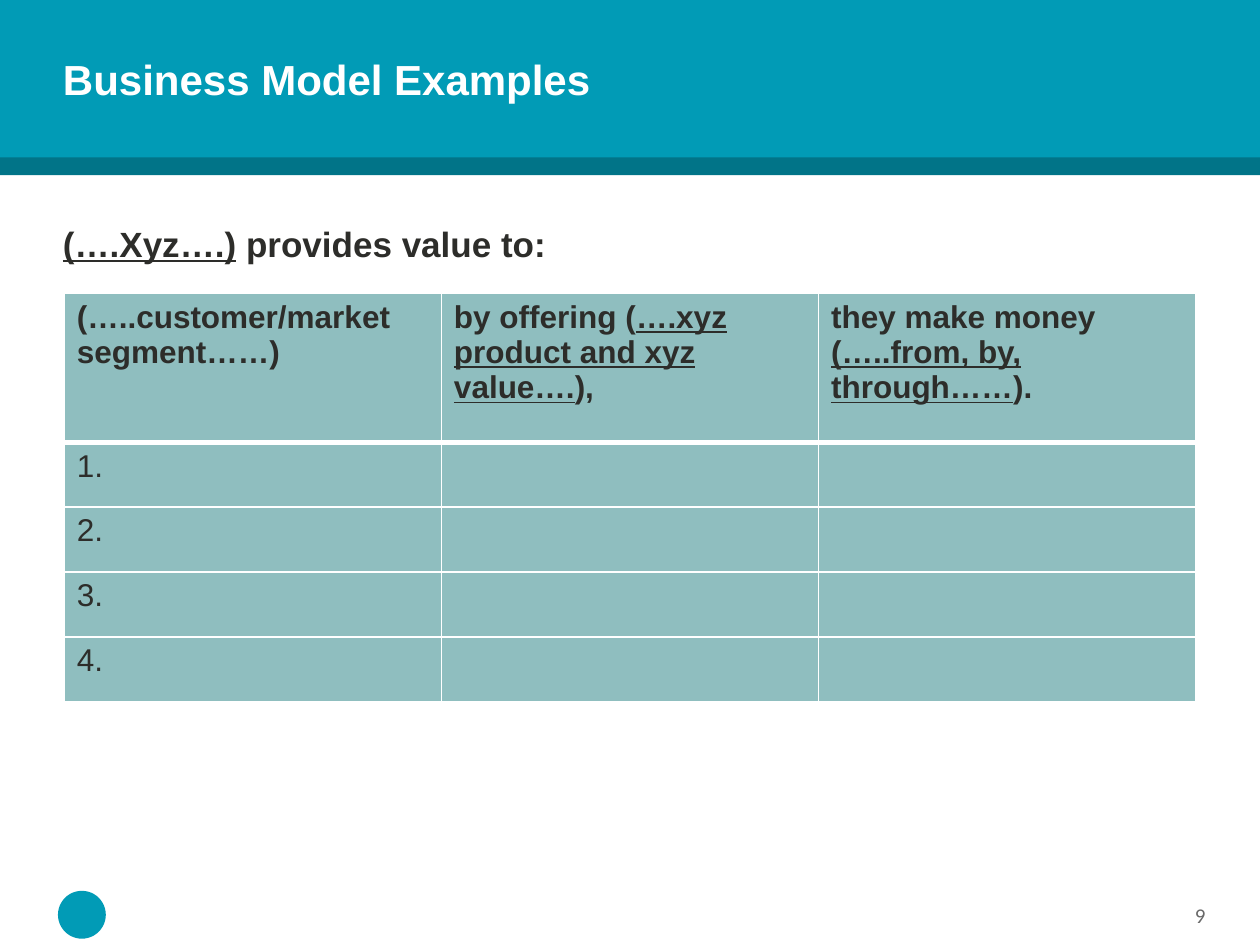
from dataclasses import dataclass

from lxml import etree
from pptx import Presentation
from pptx.dml.color import RGBColor
from pptx.enum.shapes import MSO_SHAPE
from pptx.enum.text import MSO_ANCHOR, PP_ALIGN
from pptx.oxml.ns import qn
from pptx.util import Inches, Pt

RECT, OVAL = MSO_SHAPE.RECTANGLE, MSO_SHAPE.OVAL
TOP, MIDDLE = MSO_ANCHOR.TOP, MSO_ANCHOR.MIDDLE
LEFT, CENTER = PP_ALIGN.LEFT, PP_ALIGN.CENTER

SLIDE_W, SLIDE_H = Inches(10), Inches(7.5)
COLS, ROWS = 100, 75
WHITE, INK, GREY = "FFFFFF", "2D2D2A", "696969"
TEAL, DARK_TEAL, SAGE = "019BB6", "017488", "8FBEBF"

HEADINGS = [
    [("(…..customer/market segment……)", False)],
    [("by offering (", False), ("….xyz product and xyz value….", True), ("),", False)],
    [("they make money ", False), ("(…..from, by, through……", True), (").", False)],
]
EXAMPLES = 4
HEADING_H, EXAMPLE_H = 11.8, 5.15


@dataclass
class Box:
    col: float
    row: float
    cols: float
    rows: float

    def emu(self) -> tuple[int, int, int, int]:
        return across(self.col), down(self.row), across(self.cols), down(self.rows)


@dataclass
class Block:
    box: Box
    kind: MSO_SHAPE
    color: str


BLOCKS = [
    Block(Box(0, 11.9, 100, 2), RECT, DARK_TEAL),
    Block(Box(0, 0, 100, 12.5), RECT, TEAL),
    Block(Box(4.6, 70.7, 3.8, 3.8), OVAL, TEAL),
]


def across(n: float) -> int:
    return round(SLIDE_W * n / COLS)


def down(n: float) -> int:
    return round(SLIDE_H * n / ROWS)


def rgb(color: str) -> RGBColor:
    return RGBColor.from_string(color)


def write(tf, runs, size=18, color=INK, font="Arial", bold=False,
          align=LEFT, spacing=1.0) -> None:
    tf.word_wrap = True
    p = tf.paragraphs[0]
    p.alignment, p.line_spacing = align, spacing
    for text, underline in runs:
        r = p.add_run()
        r.text = text
        f = r.font
        f.name, f.size, f.bold, f.underline = font, Pt(size), bold, underline
        f.color.rgb = rgb(color)


def add_block(slide, block: Block) -> None:
    sp = slide.shapes.add_shape(block.kind, *block.box.emu())
    sp.shadow.inherit = False
    sp.fill.solid()
    sp.fill.fore_color.rgb = rgb(block.color)
    sp.line.fill.background()


def add_text(slide, box: Box, runs, anchor=MIDDLE, **fmt) -> None:
    tf = slide.shapes.add_textbox(*box.emu()).text_frame
    tf.margin_left = tf.margin_right = tf.margin_top = tf.margin_bottom = 0
    tf.vertical_anchor = anchor
    write(tf, runs, **fmt)


def style_cell(cell, top: float, bottom: float) -> None:
    tc_pr = cell._tc.get_or_add_tcPr()
    for side, width in (("L", 1), ("R", 1), ("T", top), ("B", bottom)):
        ln = etree.SubElement(tc_pr, qn(f"a:ln{side}"), w=str(Pt(width)))
        fill = etree.SubElement(ln, qn("a:solidFill"))
        etree.SubElement(fill, qn("a:srgbClr"), val=WHITE)
    cell.fill.solid()
    cell.fill.fore_color.rgb = rgb(SAGE)


def add_examples_table(slide) -> None:
    n_cols = len(HEADINGS)
    box = Box(5.1, 23.3, 89.8, HEADING_H + EXAMPLES * EXAMPLE_H)
    table = slide.shapes.add_table(EXAMPLES + 1, n_cols, *box.emu()).table
    for column in table.columns:
        column.width = across(box.cols / n_cols)
    for i, row in enumerate(table.rows):
        row.height = down(EXAMPLE_H if i else HEADING_H)
        for cell in row.cells:
            style_cell(cell, top=3 if i == 1 else 1, bottom=1 if i else 3)
        if i:
            write(row.cells[0].text_frame, [(f"{i}.", False)])
    for cell, runs in zip(table.rows[0].cells, HEADINGS):
        write(cell.text_frame, runs, bold=True)


def main() -> None:
    prs = Presentation()
    prs.slide_width, prs.slide_height = SLIDE_W, SLIDE_H
    slide = prs.slides.add_slide(prs.slide_layouts[6])
    for block in BLOCKS:
        add_block(slide, block)
    add_text(slide, Box(92.9, 71.6, 4.7, 2), [("9", False)], anchor=TOP,
             size=12, color=GREY, font="Calibri", align=CENTER)
    add_text(slide, Box(5, 2.2, 90, 8.6), [("Business Model Examples", False)],
             size=24, color=WHITE, bold=True, spacing=0.9)
    add_text(slide, Box(5, 16, 90, 5.9),
             [("(….Xyz….)", True), (" provides value to:", False)],
             size=20, bold=True, spacing=1.2)
    add_examples_table(slide)
    prs.save("out.pptx")


if __name__ == "__main__":
    main()
